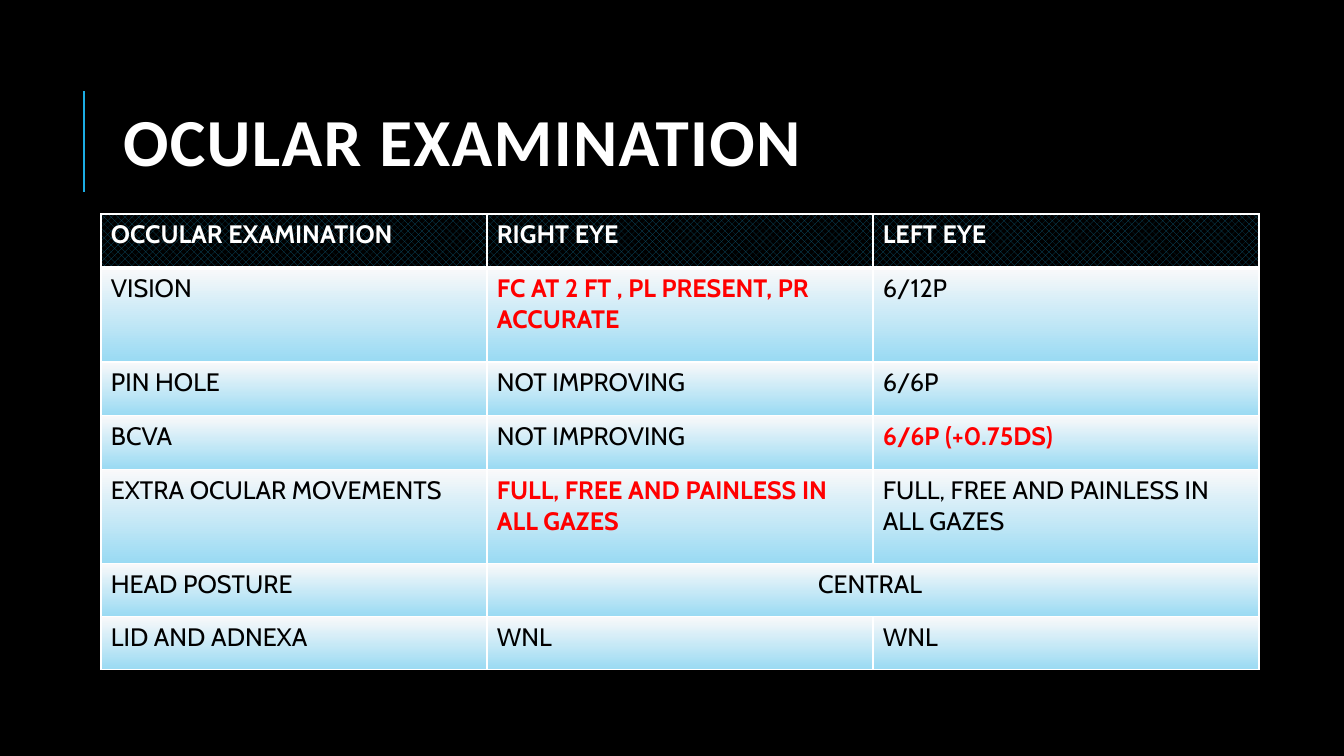
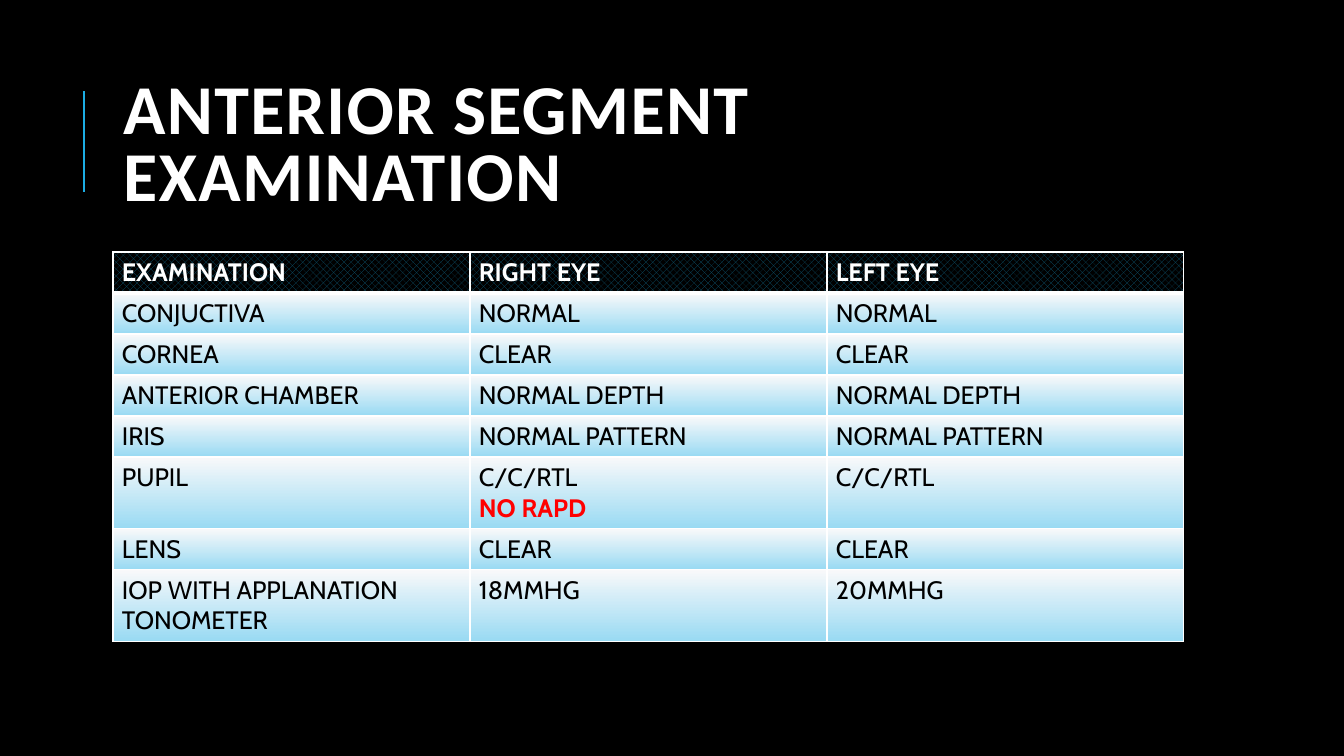
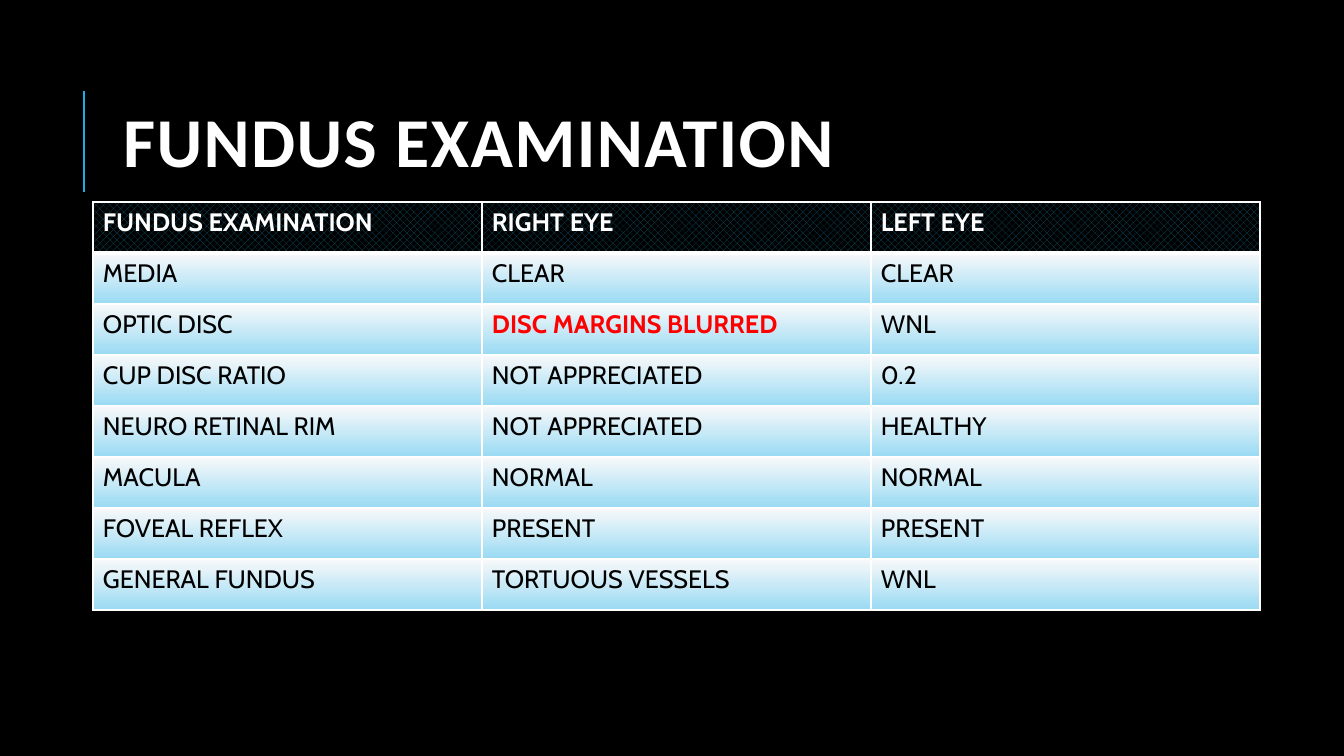
from dataclasses import dataclass

import lxml.etree
import pptx
import pptx.dml.color
import pptx.enum.dml
import pptx.enum.shapes
import pptx.enum.text
import pptx.oxml.ns
import pptx.util
from pptx.presentation import Presentation
from pptx.slide import Slide, SlideLayout
from pptx.table import _Cell
from pptx.text.text import _Paragraph

# Shared look
SLIDE_WIDTH, SLIDE_HEIGHT = 1344, 756
EMU_PER_PX = 12192000 / SLIDE_WIDTH
BLACK, WHITE, RED = "000000", "FFFFFF", "FF0000"
ACCENT, HEADER_PATTERN = "1CADE4", "0E5772"
BODY_TOP, BODY_BOTTOM = "F9F9FA", "99DAF3"
TITLE_FONT, TABLE_FONT = "Calibri", "Cabin"
TABLE_SIZE = 18
BORDER, HEADER_BORDER = 1, 3
TITLE_ONLY = 5


@dataclass(frozen=True)
class Finding:
    """A cell with an optional plain line followed by an alert line in red."""
    text: str = ""
    alert: str = ""
    centred: bool = False


@dataclass(frozen=True)
class Examination:
    """One slide; a None cell is joined to the cell on its left."""
    title: str
    title_size: int
    left: int
    top: int
    column_width: int
    row_heights: list[int]
    rows: list[list[str | Finding | None]]
    side_inset: int = 10


EXAMINATIONS = [
    Examination(
        "OCULAR EXAMINATION", 48, 101, 214, 386, [54, 94, 54, 54, 94, 53, 53],
        [
            ["OCCULAR EXAMINATION", "RIGHT EYE", "LEFT EYE"],
            ["VISION", Finding(alert="FC AT 2 FT , PL PRESENT, PR ACCURATE"), "6/12P"],
            ["PIN HOLE", "NOT IMPROVING", "6/6P"],
            ["BCVA", "NOT IMPROVING", Finding(alert="6/6P (+0.75DS)")],
            ["EXTRA OCULAR MOVEMENTS",
             Finding(alert="FULL, FREE AND PAINLESS IN ALL GAZES"),
             "FULL, FREE AND PAINLESS IN ALL GAZES"],
            ["HEAD POSTURE", Finding("CENTRAL ", centred=True), None],
            ["LID AND ADNEXA", "WNL", "WNL"],
        ],
    ),
    Examination(
        "ANTERIOR SEGMENT EXAMINATION", 50, 113, 252, 357, [41] * 8,
        [
            ["EXAMINATION", "RIGHT EYE", "LEFT EYE"],
            ["CONJUCTIVA", "NORMAL", "NORMAL"],
            ["CORNEA", "CLEAR", "CLEAR"],
            ["ANTERIOR CHAMBER", "NORMAL DEPTH", "NORMAL DEPTH"],
            ["IRIS", "NORMAL PATTERN", "NORMAL PATTERN"],
            ["PUPIL", Finding("C/C/RTL", alert="NO RAPD"), "C/C/RTL"],
            ["LENS", "CLEAR", "CLEAR"],
            ["IOP WITH APPLANATION TONOMETER", "18MMHG", "20MMHG"],
        ],
        side_inset=9,
    ),
    Examination(
        "FUNDUS EXAMINATION", 50, 93, 202, 389, [51] * 8,
        [
            ["FUNDUS EXAMINATION", "RIGHT EYE", "LEFT EYE"],
            ["MEDIA", "CLEAR", "CLEAR"],
            ["OPTIC DISC", Finding(alert="DISC MARGINS BLURRED"), "WNL"],
            ["CUP DISC RATIO", "NOT APPRECIATED", "0.2"],
            ["NEURO RETINAL RIM", "NOT APPRECIATED", "HEALTHY"],
            ["MACULA", "NORMAL", "NORMAL"],
            ["FOVEAL REFLEX", "PRESENT", "PRESENT"],
            ["GENERAL FUNDUS", "TORTUOUS VESSELS", "WNL"],
        ],
    ),
]


def px(length: int) -> pptx.util.Emu:
    return pptx.util.Emu(round(length * EMU_PER_PX))


def rgb(colour: str) -> pptx.dml.color.RGBColor:
    return pptx.dml.color.RGBColor.from_string(colour)


def set_font(paragraph: _Paragraph, name: str, size: int, colour: str, bold: bool) -> None:
    font = paragraph.font
    font.name, font.size, font.bold = name, pptx.util.Pt(size), bold
    font.color.rgb = rgb(colour)


# Master and layout
def prepare_layout(deck: Presentation) -> SlideLayout:
    background = deck.slide_master.background.fill
    background.solid()
    background.fore_color.rgb = rgb(BLACK)
    layout = deck.slide_layouts[TITLE_ONLY]
    heading = layout.placeholders[0]
    heading.left, heading.top = px(113), px(65)
    heading.width, heading.height = px(1072), px(165)
    return layout


# Title and the line beside it
def add_heading(slide: Slide, text: str, size: int) -> None:
    frame = slide.shapes.title.text_frame
    frame.text = text
    frame.word_wrap = True
    frame.auto_size = pptx.enum.text.MSO_AUTO_SIZE.NONE
    frame.vertical_anchor = pptx.enum.text.MSO_ANCHOR.MIDDLE
    paragraph = frame.paragraphs[0]
    paragraph.alignment = pptx.enum.text.PP_ALIGN.LEFT
    paragraph.line_spacing = 0.8
    set_font(paragraph, TITLE_FONT, size, WHITE, True)
    paragraph.runs[0]._r.get_or_add_rPr().set("spc", "100")

    rule = slide.shapes.add_connector(
        pptx.enum.shapes.MSO_CONNECTOR.STRAIGHT, px(84), px(192), px(84), px(91))
    rule.line.color.rgb = rgb(ACCENT)
    rule.line.width = pptx.util.Pt(1.5)
    lxml.etree.SubElement(rule._element.spPr, pptx.oxml.ns.qn("a:effectLst"))


# Table cells
def fill_cell(cell: _Cell, is_header: bool) -> None:
    if is_header:
        cell.fill.patterned()
        cell.fill.pattern = pptx.enum.dml.MSO_PATTERN.PERCENT_50
        cell.fill.fore_color.rgb = rgb(HEADER_PATTERN)
        cell.fill.back_color.rgb = rgb(BLACK)
        return
    cell.fill.gradient()
    cell.fill.gradient_angle = 270
    for stop, colour in zip(cell.fill.gradient_stops, (BODY_TOP, BODY_BOTTOM)):
        stop.color.rgb = rgb(colour)


def border_cell(cell: _Cell, top: int, bottom: int) -> None:
    properties = cell._tc.get_or_add_tcPr()
    widths = {"lnL": BORDER, "lnR": BORDER, "lnT": top, "lnB": bottom}
    for position, (side, width) in enumerate(widths.items()):
        edge = lxml.etree.Element(
            pptx.oxml.ns.qn(f"a:{side}"), w=str(pptx.util.Pt(width)))
        solid = lxml.etree.SubElement(edge, pptx.oxml.ns.qn("a:solidFill"))
        lxml.etree.SubElement(solid, pptx.oxml.ns.qn("a:srgbClr"), val=WHITE)
        properties.insert(position, edge)


def write_cell(cell: _Cell, finding: Finding, is_header: bool) -> None:
    plain_colour = WHITE if is_header else BLACK
    styled = [(finding.text, plain_colour, is_header), (finding.alert, RED, True)]
    lines = [line for line in styled if line[0]]
    cell.text = "\n".join(text for text, _, _ in lines)
    for paragraph, (_, colour, bold) in zip(cell.text_frame.paragraphs, lines):
        set_font(paragraph, TABLE_FONT, TABLE_SIZE, colour, bold)
        if finding.centred:
            paragraph.alignment = pptx.enum.text.PP_ALIGN.CENTER


def add_findings(slide: Slide, exam: Examination) -> None:
    columns = len(exam.rows[0])
    table = slide.shapes.add_table(
        len(exam.rows), columns, px(exam.left), px(exam.top),
        px(columns * exam.column_width), px(sum(exam.row_heights))).table
    table.horz_banding = False
    for column in table.columns:
        column.width = px(exam.column_width)
    for r, (height, entries) in enumerate(zip(exam.row_heights, exam.rows)):
        table.rows[r].height = px(height)
        for c, entry in enumerate(entries):
            cell = table.cell(r, c)
            cell.margin_left = cell.margin_right = px(exam.side_inset)
            fill_cell(cell, r == 0)
            border_cell(cell, HEADER_BORDER if r == 1 else BORDER,
                        HEADER_BORDER if r == 0 else BORDER)
            if entry is None:
                table.cell(r, c - 1).merge(cell)
            else:
                finding = Finding(entry) if isinstance(entry, str) else entry
                write_cell(cell, finding, r == 0)


def main() -> None:
    deck = pptx.Presentation()
    deck.slide_width, deck.slide_height = px(SLIDE_WIDTH), px(SLIDE_HEIGHT)
    layout = prepare_layout(deck)
    for exam in EXAMINATIONS:
        slide = deck.slides.add_slide(layout)
        add_heading(slide, exam.title, exam.title_size)
        add_findings(slide, exam)
    deck.save("out.pptx")


if __name__ == "__main__":
    main()
